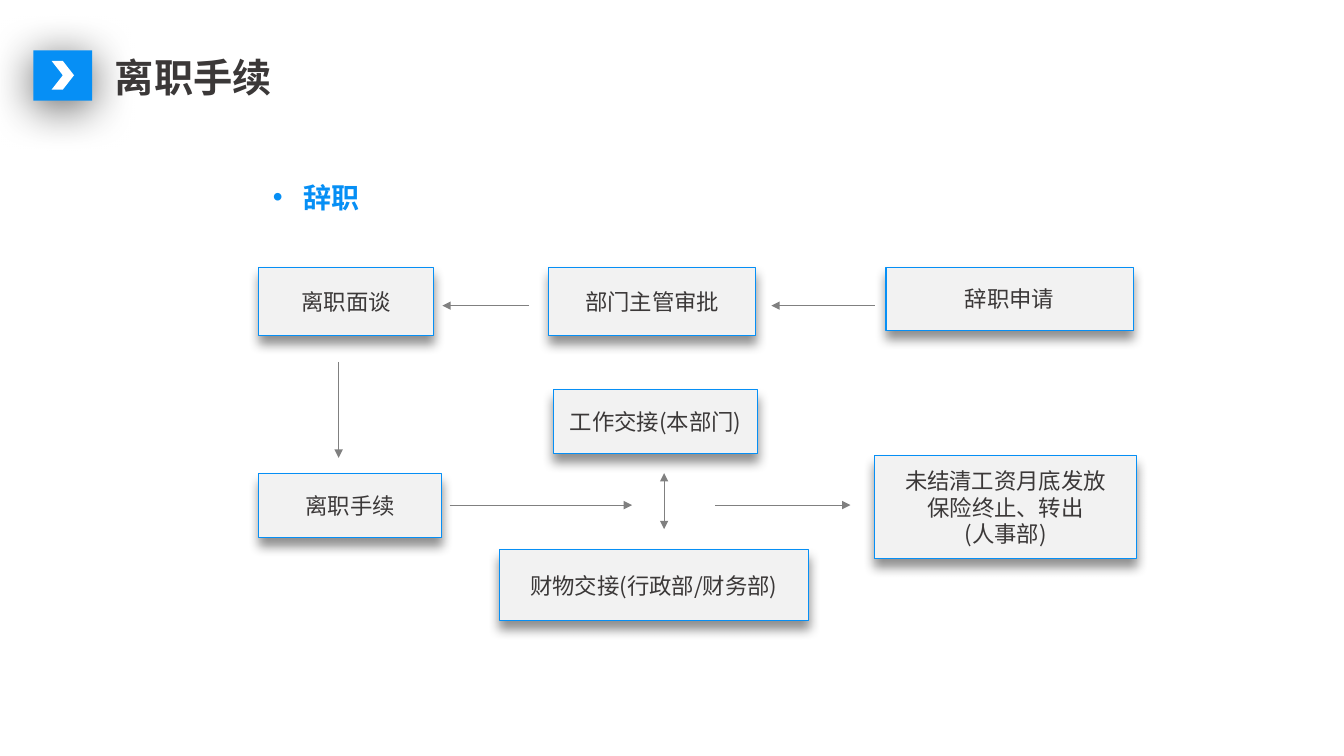
from lxml import etree
from pptx import Presentation
from pptx.dml.color import RGBColor
from pptx.enum.shapes import MSO_CONNECTOR, MSO_SHAPE
from pptx.enum.text import MSO_ANCHOR, MSO_AUTO_SIZE, PP_ALIGN
from pptx.oxml.ns import qn
from pptx.util import Pt

RECT, CHEVRON = MSO_SHAPE.RECTANGLE, MSO_SHAPE.CHEVRON
PROCESS = MSO_SHAPE.FLOWCHART_PROCESS
STRAIGHT = MSO_CONNECTOR.STRAIGHT
MIDDLE, CENTER = MSO_ANCHOR.MIDDLE, PP_ALIGN.CENTER
GROW = MSO_AUTO_SIZE.SHAPE_TO_FIT_TEXT
BLUE, DARK, GRAY, LIGHT, WHITE = "068FF5", "3B3838", "808080", "F2F2F2", "FFFFFF"
rgb = RGBColor.from_string


def add_shadow(sp, opacity, blur, dist):
    effects = etree.SubElement(sp._element.spPr, qn("a:effectLst"))
    shadow = etree.SubElement(effects, qn("a:outerShdw"), blurRad=str(Pt(blur)),
                              dist=str(Pt(dist)), dir="5400000", algn="t", rotWithShape="0")
    color = etree.SubElement(shadow, qn("a:srgbClr"), val="000000")
    etree.SubElement(color, qn("a:alpha"), val=str(opacity * 1000))


def write(p, text, size, color, bold=False):
    r = p.add_run()
    r.text = text
    for name, value in {"size": Pt(size), "bold": bold, "name": "Noto Sans CJK SC"}.items():
        setattr(r.font, name, value)
    r.font.color.rgb = rgb(color)
    etree.SubElement(r._r.get_or_add_rPr(), qn("a:ea"), typeface="Noto Sans CJK SC")


prs = Presentation()
prs.slide_width, prs.slide_height = Pt(960), Pt(540)
s = prs.slides.add_slide(prs.slide_layouts[6])

# Title badge
for kind, box, color in [(RECT, (23.8, 36, 42, 36), BLUE),
                         (CHEVRON, (36.9, 43.5, 16, 20.5), WHITE)]:
    sp = s.shapes.add_shape(kind, *map(Pt, box))
    sp.fill.solid()
    sp.fill.fore_color.rgb = rgb(color)
    sp.line.fill.background()
    if kind == RECT:
        add_shadow(sp, 62, 32, 5)
    else:
        sp.shadow.inherit = False

# Title
tf = s.shapes.add_textbox(Pt(75), Pt(38), Pt(136), Pt(38)).text_frame
tf.word_wrap, tf.auto_size = False, GROW
p = tf.paragraphs[0]
p.line_spacing = 0.9
write(p, "离职手续", 28, DARK, True)

# Bulleted heading
tf = s.shapes.add_textbox(Pt(162.7), Pt(125.3), Pt(136), Pt(31.5)).text_frame
tf.word_wrap, tf.auto_size = True, GROW
p = tf.paragraphs[0]
p.alignment = CENTER
pPr = p._p.get_or_add_pPr()
etree.SubElement(pPr, qn("a:buFont"), typeface="Arial")
etree.SubElement(pPr, qn("a:buChar"), char="•")
write(p, " 辞职", 20, BLUE, True)

# Process steps
steps = [
    ((185, 190.8, 124.6, 48.5), ["离职面谈"]),
    ((632.9, 190.8, 176.6, 45.5), ["辞职申请"]),
    ((392, 190.8, 147.6, 48.5), ["部门主管审批"]),
    ((185, 338.4, 130.3, 45.5), ["离职手续"]),
    ((395.3, 278.3, 146, 45.5), ["工作交接(本部门)"]),
    ((356.5, 392.4, 221, 51), ["财物交接(行政部/财务部)"]),
    ((624.7, 325.5, 187.2, 73.5), ["未结清工资月底发放", "保险终止、转出", "(人事部)"]),
]
for box, lines in steps:
    sp = s.shapes.add_shape(PROCESS, *map(Pt, box))
    sp.fill.solid()
    sp.fill.fore_color.rgb = rgb(LIGHT)
    sp.line.color.rgb = rgb(BLUE)
    sp.line.width = Pt(0.75)
    add_shadow(sp, 43, 8, 6)
    tf = sp.text_frame
    tf.word_wrap, tf.vertical_anchor = False, MIDDLE
    for i, line in enumerate(lines):
        p = tf.add_paragraph() if i else tf.paragraphs[0]
        p.alignment = CENTER
        write(p, line, 16, DARK)

# Arrows
arrows = [
    ((378, 218.3, 316, 218.3), ["tailEnd"]),
    ((625, 218.3, 551, 218.3), ["tailEnd"]),
    ((241.9, 258.5, 241.9, 327), ["tailEnd"]),
    ((321.2, 360.8, 451.5, 360.8), ["tailEnd"]),
    ((511, 360.8, 607.5, 360.8), ["tailEnd"]),
    ((474.4, 337.9, 474.4, 378), ["headEnd", "tailEnd"]),
]
for ends, heads in arrows:
    sp = s.shapes.add_connector(STRAIGHT, *map(Pt, ends))
    sp.line.color.rgb = rgb(GRAY)
    sp.line.width = Pt(0.75)
    for head in heads:
        etree.SubElement(sp.line._get_or_add_ln(), qn("a:" + head), type="triangle")
    etree.SubElement(sp._element.spPr, qn("a:effectLst"))

prs.save("out.pptx")
